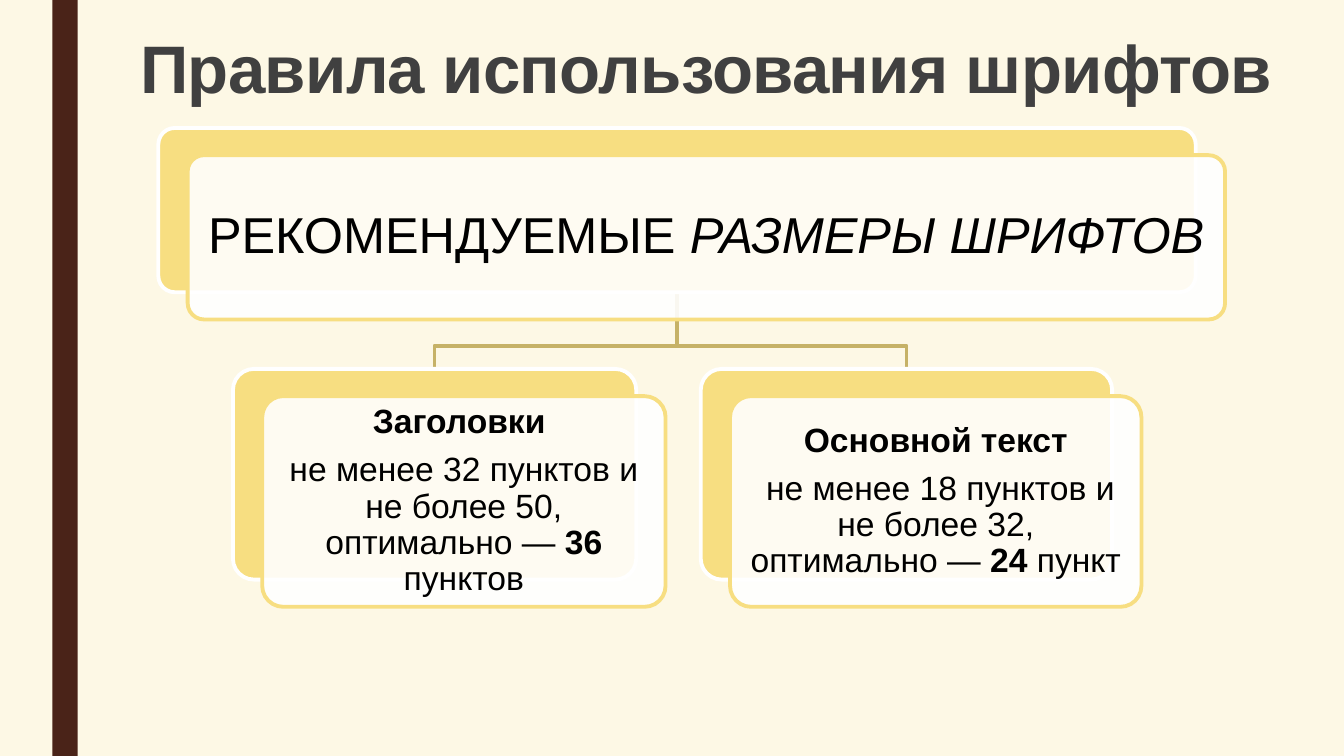
import pptx
import pptx.util
import pptx.dml.color
import pptx.enum.shapes
import pptx.enum.text
import pptx.oxml.ns
import lxml.etree

WIDTH = pptx.util.Inches(13.33)
HEIGHT = pptx.util.Inches(7.5)
CREAM, BROWN, YELLOW, OLIVE = "FDF8E5", "4A2318", "F7DE81", "C6B267"
WHITE, BLACK, GREY = "FFFFFF", "000000", "404040"
BORDER = pptx.util.Pt(2.75)
SHIFT_X, SHIFT_Y = 2.18, 3.6
RULE_TOP, RULE_HEIGHT = 48.8, 27.87
BRANCH_Y = 45.73


def across(share):
    return round(WIDTH * share / 100)


def down(share):
    return round(HEIGHT * share / 100)


def place(left, top, width, height):
    return across(left), down(top), across(width), down(height)


def color(hex_code):
    return pptx.dml.color.RGBColor.from_string(hex_code)


def add_panel(slide, area, kind, fill, border=None, opacity=100):
    panel = slide.shapes.add_shape(kind, *place(*area))
    panel.shadow.inherit = False
    panel.fill.solid()
    panel.fill.fore_color.rgb = color(fill)
    if opacity < 100:
        tint = panel._element.spPr.find(".//" + pptx.oxml.ns.qn("a:srgbClr"))
        alpha = lxml.etree.SubElement(tint, pptx.oxml.ns.qn("a:alpha"))
        alpha.set("val", str(opacity * 1000))
    if border:
        panel.line.color.rgb = color(border)
        panel.line.width = BORDER
    else:
        panel.line.fill.background()
    return panel


def add_text(slide, area, paragraphs, size, ink, anchor, spacing, after=0, inset=None, tracking=0):
    frame = slide.shapes.add_textbox(*place(*area)).text_frame
    frame.word_wrap = True
    frame.vertical_anchor = anchor
    if inset is not None:
        margin = pptx.util.Inches(inset)
        frame.margin_left = frame.margin_right = margin
        frame.margin_top = frame.margin_bottom = margin
    for index, pieces in enumerate(paragraphs):
        paragraph = frame.paragraphs[0] if index == 0 else frame.add_paragraph()
        paragraph.alignment = pptx.enum.text.PP_ALIGN.CENTER
        paragraph.line_spacing = spacing
        paragraph.space_after = pptx.util.Pt(after)
        for words, style in pieces:
            run = paragraph.add_run()
            run.text = words
            run.font.name = "Arial"
            run.font.size = pptx.util.Pt(size)
            run.font.color.rgb = color(ink)
            run.font.bold = style == "bold"
            run.font.italic = style == "italic"
            if tracking:
                run._r.get_or_add_rPr().set("spc", str(tracking))


def add_card(slide, area, paragraphs, size, gap, inset):
    left, top, width, height = area
    rounded = pptx.enum.shapes.MSO_SHAPE.ROUNDED_RECTANGLE
    front_left, front_top = left + SHIFT_X, top + SHIFT_Y
    back = add_panel(slide, area, rounded, YELLOW, WHITE)
    front = add_panel(slide, (front_left, front_top, width, height), rounded, WHITE, YELLOW, 90)
    back.adjustments[0] = front.adjustments[0] = 0.1
    gap_x, gap_y = gap
    text_area = (front_left + gap_x, front_top + gap_y, width - 2 * gap_x, height - 2 * gap_y)
    add_text(slide, text_area, paragraphs, size, BLACK, pptx.enum.text.MSO_ANCHOR.MIDDLE,
             0.9, after=size * 0.35, inset=inset)


def add_branch(slide, parent, child):
    start_x = parent[0] + parent[2] / 2
    start_y = parent[1] + parent[3]
    end_x = child[0] + child[2] / 2
    builder = slide.shapes.build_freeform(across(start_x), down(start_y))
    bends = [(start_x, BRANCH_Y), (end_x, BRANCH_Y), (end_x, child[1])]
    builder.add_line_segments([(across(x), down(y)) for x, y in bends], close=False)
    branch = builder.convert_to_shape()
    branch.shadow.inherit = False
    branch.fill.background()
    branch.line.color.rgb = color(OLIVE)
    branch.line.width = BORDER


def main():
    deck = pptx.Presentation()
    deck.slide_width, deck.slide_height = WIDTH, HEIGHT
    slide = deck.slides.add_slide(deck.slide_layouts[6])
    slide.background.fill.solid()
    slide.background.fill.fore_color.rgb = color(CREAM)
    add_panel(slide, (3.9, 0, 1.88, 100), pptx.enum.shapes.MSO_SHAPE.RECTANGLE, BROWN)

    topic = (11.78, 16.93, 77.19, 21.73)
    topic_text = [[("РЕКОМЕНДУЕМЫЕ ", ""), ("РАЗМЕРЫ ШРИФТОВ", "italic")]]
    rules = [
        (17.33, 30.01, "Заголовки ",
         "не менее 32 пунктов и не более 50, оптимально — ", "36 ", "пунктов"),
        (52.14, 30.61, "Основной текст",
         " не менее 18 пунктов и не более 32, оптимально — ", "24 ", "пункт"),
    ]
    for left, width, *_ in reversed(rules):
        add_branch(slide, topic, (left, RULE_TOP, width, RULE_HEIGHT))
    add_card(slide, topic, topic_text, 36, (0.38, 0.6), 0.15)
    for left, width, heading, limits, best, unit in rules:
        rule_text = [[(heading, "bold")], [(limits, ""), (best, "bold"), (unit, "")]]
        add_card(slide, (left, RULE_TOP, width, RULE_HEIGHT), rule_text, 24, (0.45, 0.8), 0.1)

    add_text(slide, (6.53, 4.13, 92.05, 10.67), [[("Правила использования шрифтов", "bold")]],
             48, GREY, pptx.enum.text.MSO_ANCHOR.BOTTOM, 0.85, tracking=-50)
    deck.save("out.pptx")


if __name__ == "__main__":
    main()
